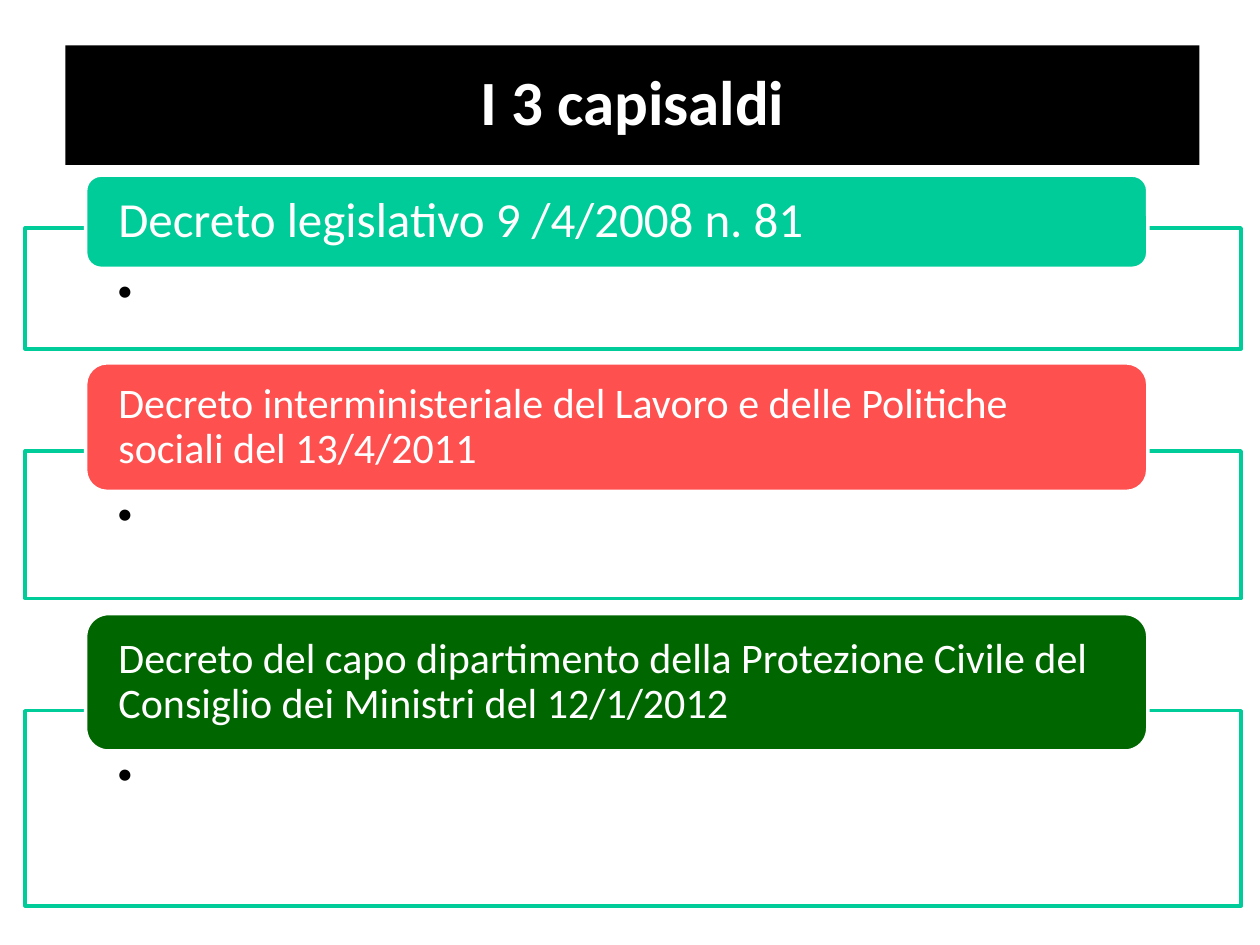
from dataclasses import dataclass

from lxml import etree
from pptx import Presentation
from pptx.dml.color import RGBColor
from pptx.enum.shapes import MSO_SHAPE as Shape
from pptx.enum.text import MSO_ANCHOR as Anchor, PP_ALIGN as Align
from pptx.oxml.ns import qn
from pptx.slide import Slide
from pptx.util import Inches, Pt

COLORS = {
    "white": "FFFFFF",
    "black": "000000",
    "teal": "00CC99",
    "red": "FF5050",
    "green": "006600",
}

# text, size, color, heading top and height, frame top and height
DECREES = [
    ("Decreto legislativo 9 /4/2008 n. 81", 28, "teal", 1.39, 0.74, 1.81, 0.96),
    ("Decreto interministeriale del Lavoro e delle Politiche sociali del 13/4/2011",
     24, "red", 2.88, 1.02, 3.58, 1.17),
    ("Decreto del capo dipartimento della Protezione Civile del Consiglio dei "
     "Ministri del 12/1/2012", 24, "green", 4.87, 1.09, 5.64, 1.55),
]


@dataclass
class SlideBuilder:
    slide: Slide
    font: str = "Calibri"
    line_width: float = 2

    def box(self, kind, bounds, fill, line=None):
        shape = self.slide.shapes.add_shape(kind, *map(Inches, bounds))
        shape.shadow.inherit = False
        shape.fill.solid()
        shape.fill.fore_color.rgb = RGBColor.from_string(COLORS[fill])
        if line:
            shape.line.color.rgb = RGBColor.from_string(COLORS[line])
            shape.line.width = Pt(self.line_width)
        else:
            shape.line.fill.background()
        return shape

    def set_text(self, shape, text, size, color, align=Align.LEFT,
                 anchor=Anchor.MIDDLE, inset=(0.1, 0.05), bold=False):
        """Fill the shape with one paragraph; inset is (sides, top)."""
        frame = shape.text_frame
        frame.word_wrap = True
        frame.vertical_anchor = anchor
        frame.margin_left = frame.margin_right = Inches(inset[0])
        frame.margin_top = Inches(inset[1])
        frame.margin_bottom = Inches(0)
        paragraph = frame.paragraphs[0]
        paragraph.text = text
        paragraph.alignment = align
        paragraph.line_spacing = 0.9
        paragraph.font.name = self.font
        paragraph.font.size = Pt(size)
        paragraph.font.bold = bold
        paragraph.font.color.rgb = RGBColor.from_string(COLORS[color])

    def title(self, text):
        shape = self.box(Shape.RECTANGLE, (0.52, 0.36, 9, 0.95), "black")
        self.set_text(shape, text, 36, "white", align=Align.CENTER, inset=(0.1, 0), bold=True)

    def frame(self, top, height):
        shape = self.box(Shape.RECTANGLE, (0.2, top, 9.65, height), "white", "teal")
        fill = shape.element.spPr.find(qn("a:solidFill"))
        etree.SubElement(fill[0], qn("a:alpha"), val="90000")
        self.set_text(shape, "•", 18, "black", anchor=Anchor.TOP, inset=(0.73, 0.37))

    def heading(self, text, size, fill, top, height):
        shape = self.box(Shape.ROUNDED_RECTANGLE, (0.68, top, 8.43, height), fill, "white")
        # The rounded corners already push the text in by 0.29 of their radius.
        corner_inset = 0.29 * height / 6
        self.set_text(shape, text, size, "white", inset=(0.26 - corner_inset, 0))


def main():
    presentation = Presentation()
    presentation.slide_width = Inches(10)
    presentation.slide_height = Inches(7.5)
    builder = SlideBuilder(presentation.slides.add_slide(presentation.slide_layouts[6]))

    for text, size, fill, top, height, frame_top, frame_height in DECREES:
        builder.frame(frame_top, frame_height)
        builder.heading(text, size, fill, top, height)
    builder.title("I 3 capisaldi")

    presentation.save("out.pptx")


if __name__ == "__main__":
    main()
